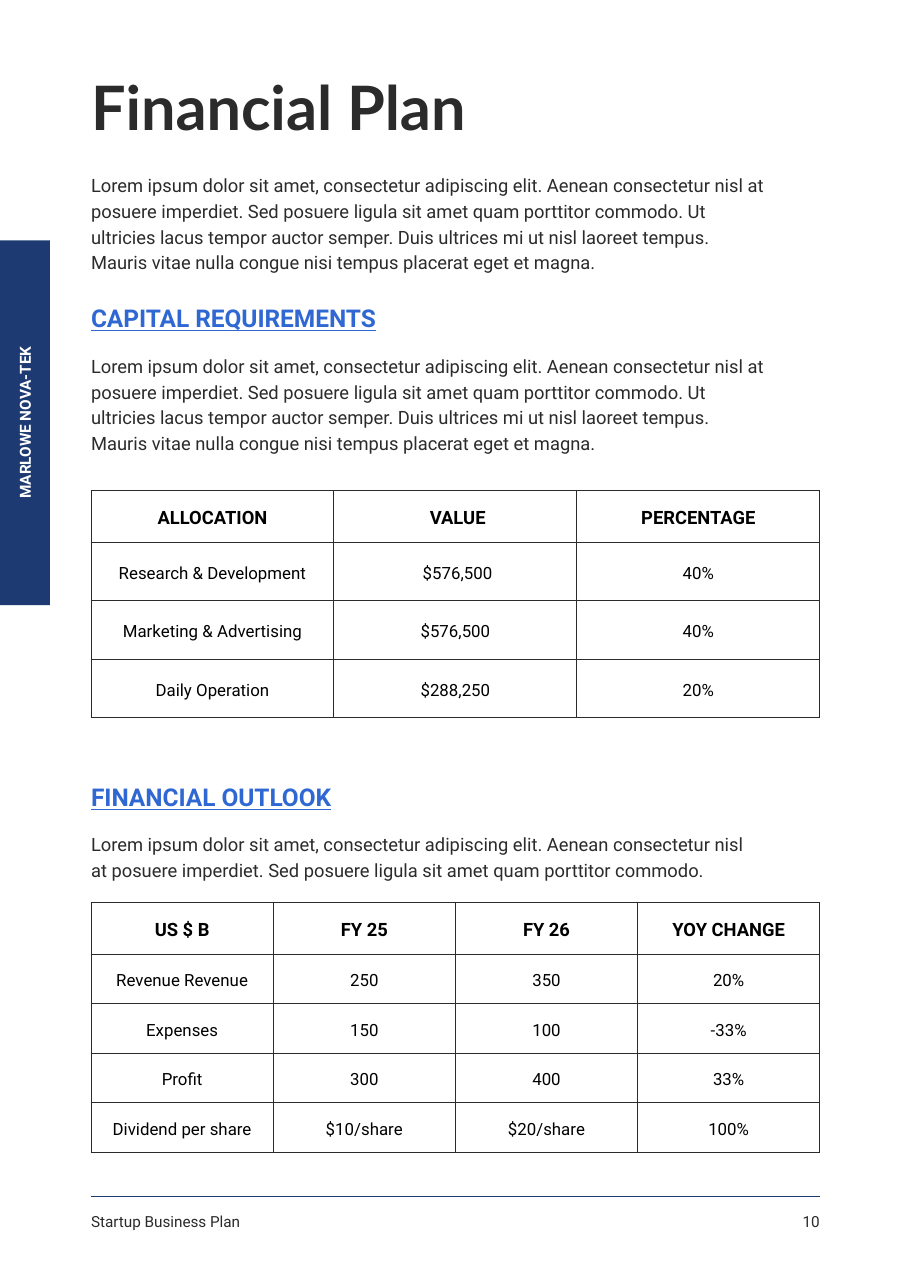
from lxml.etree import SubElement
from pptx import Presentation
from pptx.dml.color import RGBColor
from pptx.enum.shapes import MSO_CONNECTOR, MSO_SHAPE
from pptx.enum.text import MSO_ANCHOR, PP_ALIGN
from pptx.oxml.ns import qn
from pptx.util import Cm, Pt

NAVY = RGBColor(0x1D, 0x3A, 0x72)
BLUE = RGBColor(0x2F, 0x68, 0xD3)
CHARCOAL = RGBColor(0x2B, 0x2B, 0x2B)
BLACK = RGBColor(0, 0, 0)
WHITE = RGBColor(0xFF, 0xFF, 0xFF)

# Page frame in centimetres
LEFT, WIDTH = 2.1, 16.8
RIGHT = LEFT + WIDTH

INTRODUCTION = [
    "Lorem ipsum dolor sit amet, consectetur adipiscing elit. Aenean consectetur nisl at "
    "posuere imperdiet. Sed posuere ligula sit amet quam porttitor commodo. Ut",
    "ultricies lacus tempor auctor semper. Duis ultrices mi ut nisl laoreet tempus.",
    "Mauris vitae nulla congue nisi tempus placerat eget et magna.",
]
OUTLOOK = [
    "Lorem ipsum dolor sit amet, consectetur adipiscing elit. Aenean consectetur nisl",
    "at posuere imperdiet. Sed posuere ligula sit amet quam porttitor commodo.",
]
ALLOCATION_ROWS = [
    ["ALLOCATION", " VALUE", "PERCENTAGE"],
    ["Research & Development", " $576,500", "40%"],
    ["Marketing & Advertising", "$576,500", "40%"],
    ["Daily Operation", "$288,250", "20%"],
]
OUTLOOK_ROWS = [
    ["US $ B", "FY 25", "FY 26", "YOY CHANGE"],
    ["Revenue Revenue", "250", "350", "20%"],
    ["Expenses", "150", "100", "-33%"],
    ["Profit", "300", "400", "33%"],
    ["Dividend per share", "$10/share", "$20/share", "100%"],
]


def write_text(frame, lines, size=12, color=CHARCOAL, font="Roboto", bold=False,
               underline=False, align=PP_ALIGN.LEFT, leading=1.4):
    """Fill a text frame with one paragraph per line."""
    for index, line in enumerate(lines):
        paragraph = frame.paragraphs[0] if index == 0 else frame.add_paragraph()
        paragraph.alignment = align
        paragraph.line_spacing = Pt(size * leading)
        run = paragraph.add_run()
        run.text = line
        run.font.name = font
        run.font.size = Pt(size)
        run.font.bold = bold
        run.font.underline = underline
        run.font.color.rgb = color


class PlanPage:
    """Holds the page style and the slide being built."""

    line_width = Pt(0.75)
    cell_margin = Cm(0.25)
    header_height = 1.19

    def __init__(self, slide):
        self.slide = slide

    def text(self, lines, left, top, width, height, rotation=0, **style):
        box = self.slide.shapes.add_textbox(Cm(left), Cm(top), Cm(width), Cm(height))
        box.rotation = rotation
        frame = box.text_frame
        frame.word_wrap = True
        frame.margin_left = frame.margin_right = 0
        frame.margin_top = frame.margin_bottom = 0
        write_text(frame, lines, **style)

    def heading(self, title, top):
        self.text([title], LEFT, top, 12.14, 0.76, size=16, color=BLUE,
                  bold=True, underline=True)

    def band(self, left, top, width, height):
        shape = self.slide.shapes.add_shape(
            MSO_SHAPE.RECTANGLE, Cm(left), Cm(top), Cm(width), Cm(height))
        shape.shadow.inherit = False
        shape.fill.solid()
        shape.fill.fore_color.rgb = NAVY
        shape.line.fill.background()

    def rule(self, top):
        connector = self.slide.shapes.add_connector(
            MSO_CONNECTOR.STRAIGHT, Cm(LEFT), Cm(top), Cm(RIGHT), Cm(top))
        connector.line.color.rgb = NAVY
        connector.line.width = self.line_width
        SubElement(connector._element.spPr, qn("a:effectLst"))

    def border(self, cell):
        properties = cell._tc.get_or_add_tcPr()
        for side in ("lnL", "lnR", "lnT", "lnB"):
            line = SubElement(properties, qn(f"a:{side}"), w=str(self.line_width))
            fill = SubElement(line, qn("a:solidFill"))
            SubElement(fill, qn("a:srgbClr"), val=str(CHARCOAL))

    def table(self, rows, top, row_height):
        heights = [self.header_height] + [row_height] * (len(rows) - 1)
        columns = len(rows[0])
        table = self.slide.shapes.add_table(
            len(rows), columns, Cm(LEFT), Cm(top), Cm(WIDTH), Cm(sum(heights))).table
        table.first_row = table.horz_banding = False
        for column in table.columns:
            column.width = Cm(WIDTH / columns)
        for row_index, values in enumerate(rows):
            table.rows[row_index].height = Cm(heights[row_index])
            header = row_index == 0
            for column_index, value in enumerate(values):
                cell = table.cell(row_index, column_index)
                cell.vertical_anchor = MSO_ANCHOR.MIDDLE
                cell.margin_left = cell.margin_right = self.cell_margin
                cell.margin_top = cell.margin_bottom = self.cell_margin
                self.border(cell)
                cell.fill.background()
                write_text(cell.text_frame, [value], size=12 if header else 11,
                           color=BLACK, bold=header, align=PP_ALIGN.CENTER)


def main():
    presentation = Presentation()
    presentation.slide_width = Cm(20.98)
    presentation.slide_height = Cm(29.69)
    page = PlanPage(presentation.slides.add_slide(presentation.slide_layouts[6]))

    # Side band with the company name
    page.band(0, 5.54, 1.15, 8.41)
    page.text(["MARLOWE NOVA-TEK"], -3.05, 9.5, 7.16, 0.48, rotation=270, size=10,
              color=WHITE, bold=True, align=PP_ALIGN.CENTER)

    # Title and introduction
    page.text(["Financial Plan"], LEFT, 1.6, WIDTH, 1.7, size=40, font="Lato",
              bold=True, leading=1.2)
    page.text(INTRODUCTION, LEFT, 3.94, WIDTH, 2.31)

    # Capital requirements
    page.heading("CAPITAL REQUIREMENTS", 6.88)
    page.text(INTRODUCTION, LEFT, 8.1, WIDTH, 2.31)
    page.table(ALLOCATION_ROWS, 11.31, 1.35)

    # Financial outlook
    page.heading("FINANCIAL OUTLOOK", 17.92)
    page.text(OUTLOOK, LEFT, 19.13, WIDTH, 1.17)
    page.table(OUTLOOK_ROWS, 20.81, 1.14)

    # Footer
    page.rule(27.58)
    page.text(["Startup Business Plan"], LEFT, 27.88, 5.18, 0.48, size=10)
    page.text(["10"], RIGHT - 5.18, 27.88, 5.18, 0.48, size=10, align=PP_ALIGN.RIGHT)

    presentation.save("out.pptx")


if __name__ == "__main__":
    main()
